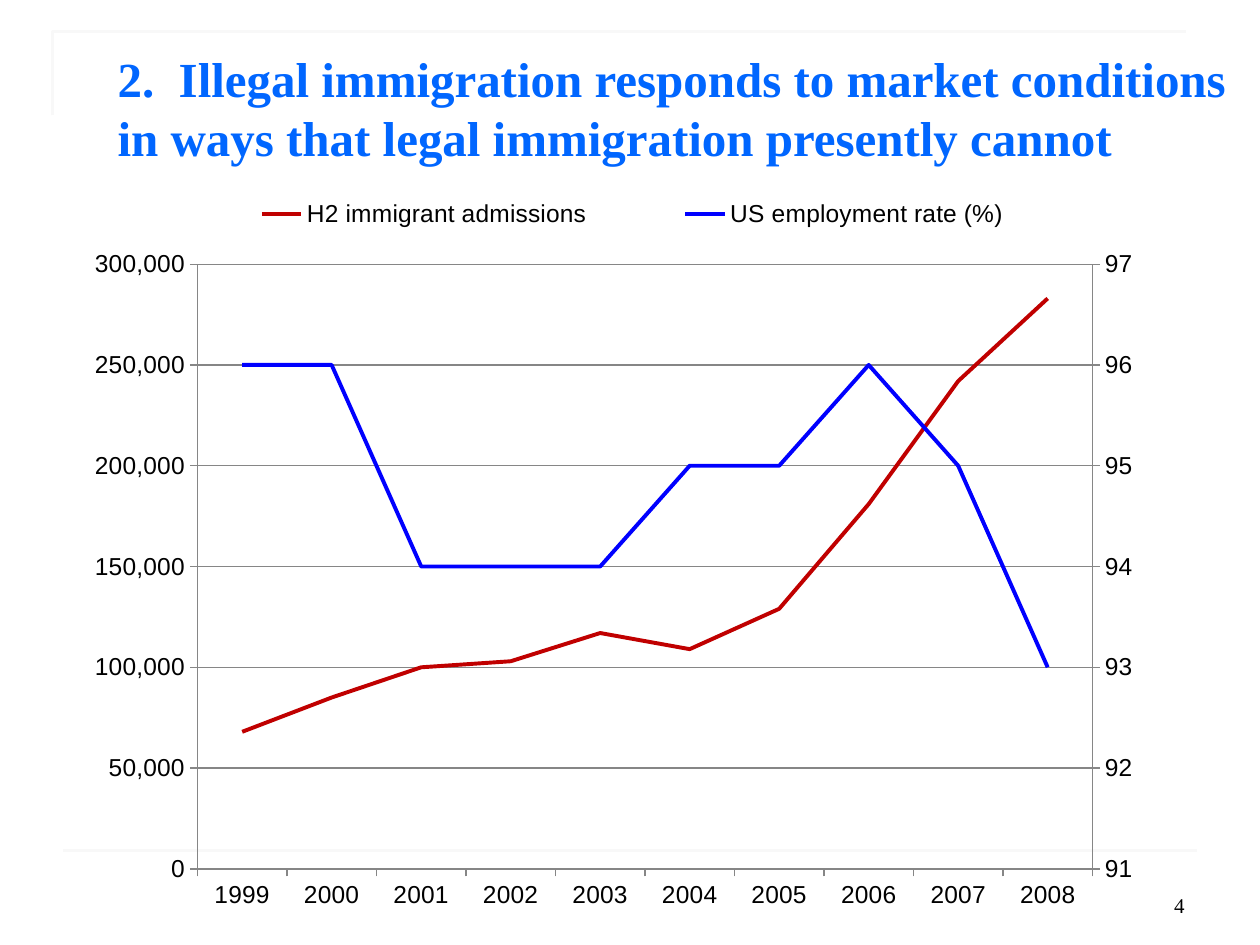
from copy import deepcopy

from lxml import etree
from pptx import Presentation
from pptx.chart.axis import CategoryAxis, ValueAxis
from pptx.chart.data import CategoryChartData
from pptx.dml.color import RGBColor
from pptx.enum.chart import XL_CHART_TYPE, XL_LEGEND_POSITION, XL_TICK_MARK
from pptx.enum.shapes import MSO_CONNECTOR
from pptx.enum.text import MSO_ANCHOR, MSO_AUTO_SIZE, PP_ALIGN
from pptx.oxml import parse_xml
from pptx.oxml.ns import nsdecls, qn
from pptx.util import Pt

LINE_CHART = XL_CHART_TYPE.LINE
LEGEND_TOP = XL_LEGEND_POSITION.TOP
TICK_OUTSIDE = XL_TICK_MARK.OUTSIDE
STRAIGHT = MSO_CONNECTOR.STRAIGHT
TOP, BOTTOM = MSO_ANCHOR.TOP, MSO_ANCHOR.BOTTOM
LEFT, RIGHT = PP_ALIGN.LEFT, PP_ALIGN.RIGHT
NO_AUTOFIT = MSO_AUTO_SIZE.NONE
CHART_WIDTH, CHART_HEIGHT = 618, 420


def color(hex_string):
    return RGBColor.from_string(hex_string)


def manual_layout(left, top, width, height, target=""):
    return parse_xml(
        f'<c:layout {nsdecls("c")}><c:manualLayout>{target}'
        '<c:xMode val="edge"/><c:yMode val="edge"/>'
        f'<c:x val="{left / CHART_WIDTH}"/><c:y val="{top / CHART_HEIGHT}"/>'
        f'<c:w val="{width / CHART_WIDTH}"/><c:h val="{height / CHART_HEIGHT}"/>'
        '</c:manualLayout></c:layout>'
    )


deck = Presentation()
deck.slide_width, deck.slide_height = Pt(720), Pt(540)
page = deck.slides.add_slide(deck.slide_layouts[5])

builder = page.shapes.build_freeform(Pt(30), Pt(66))
builder.add_line_segments([(Pt(30), Pt(18)), (Pt(678), Pt(18))], close=False)
corner = builder.convert_to_shape()
corner.shadow.inherit = False
corner.fill.background()
footer_rule = page.shapes.add_connector(STRAIGHT, Pt(36), Pt(486), Pt(684), Pt(486))
etree.SubElement(footer_rule.element.spPr, qn("a:effectLst"))
for rule in (corner, footer_rule):
    rule.line.color.rgb = color("F8F8F8")
    rule.line.width = Pt(1.5)

title = page.shapes.title
title.left, title.top, title.width, title.height = Pt(60), Pt(24), Pt(648), Pt(120)
number_box = page.shapes.add_textbox(Pt(516), Pt(492), Pt(168), Pt(36))
heading = "2.  Illegal immigration responds to market conditions in ways that legal immigration presently cannot"
texts = [
    (title, heading, 28, "0066FF", True, TOP, LEFT),
    (number_box, "4", 12, "000000", False, BOTTOM, RIGHT),
]
for box, words, size, hue, bold, anchor, align in texts:
    frame = box.text_frame
    frame.word_wrap = True
    frame.auto_size = NO_AUTOFIT
    frame.vertical_anchor = anchor
    para = frame.paragraphs[0]
    para.alignment = align
    para.line_spacing = 1.0
    span = para.add_run()
    span.text = words
    span.font.name = "Times New Roman"
    span.font.size = Pt(size)
    span.font.bold = bold
    span.font.color.rgb = color(hue)

data = CategoryChartData()
data.categories = [str(year) for year in range(1999, 2009)]
data.add_series(
    "H2 immigrant admissions",
    [68000, 85000, 100000, 103000, 117000, 109000, 129000, 181000, 242000, 283000],
)
data.add_series("US employment rate (%)", [96, 96, 94, 94, 94, 95, 95, 96, 95, 93])
chart = page.shapes.add_chart(
    LINE_CHART, Pt(42), Pt(108), Pt(CHART_WIDTH), Pt(CHART_HEIGHT), data
).chart
chart.has_title = False
chart.font.name = "Arial"
chart.font.size = Pt(14)
chart.font.color.rgb = color("000000")
chart.has_legend = True
chart.legend.position = LEGEND_TOP
chart.legend.include_in_layout = False

for series, hue in zip(chart.plots[0].series, ("C00000", "0000FF")):
    series.smooth = False
    series.format.line.color.rgb = color(hue)
    series.format.line.width = Pt(2.25)

years, admissions = chart.category_axis, chart.value_axis
for axis in (years, admissions):
    axis.major_tick_mark = TICK_OUTSIDE
    axis.format.line.color.rgb = color("868686")
    axis.format.line.width = Pt(0.75)
admissions.minimum_scale, admissions.maximum_scale = 0, 300000
admissions.major_unit = 50000
admissions.tick_labels.number_format = "#,##0"
admissions.tick_labels.number_format_is_linked = False
admissions.has_major_gridlines = True
admissions.major_gridlines.format.line.color.rgb = color("868686")
admissions.major_gridlines.format.line.width = Pt(0.75)

plot_area = chart.element.find(".//" + qn("c:plotArea"))
left_plot = plot_area.find(qn("c:lineChart"))
right_plot = deepcopy(left_plot)
left_plot.remove(left_plot.findall(qn("c:ser"))[1])
right_plot.remove(right_plot.findall(qn("c:ser"))[0])
left_plot.addnext(right_plot)

hidden_years = deepcopy(plot_area.find(qn("c:catAx")))
right_values = deepcopy(plot_area.find(qn("c:valAx")))
plot_area.find(qn("c:valAx")).addnext(right_values)
right_values.addnext(hidden_years)
for node, axis_id in zip(right_plot.findall(qn("c:axId")), ("5001", "5002")):
    node.set("val", axis_id)
for node, own_id, crossing_id in ((hidden_years, "5001", "5002"), (right_values, "5002", "5001")):
    node.find(qn("c:axId")).set("val", own_id)
    node.find(qn("c:crossAx")).set("val", crossing_id)
right_values.find(qn("c:axPos")).set("val", "r")
right_values.find(qn("c:crosses")).set("val", "max")
CategoryAxis(hidden_years).visible = False
employment = ValueAxis(right_values)
employment.has_major_gridlines = False
employment.minimum_scale, employment.maximum_scale = 91, 97
employment.major_unit = 1
employment.tick_labels.number_format = "General"

for old_layout in plot_area.findall(qn("c:layout")):
    plot_area.remove(old_layout)
plot_area.insert(0, manual_layout(70.8, 43, 511.5, 345.6, '<c:layoutTarget val="inner"/>'))
legend = chart.element.find(".//" + qn("c:legend"))
for old_layout in legend.findall(qn("c:layout")):
    legend.remove(old_layout)
legend.find(qn("c:legendPos")).addnext(manual_layout(56, 4, 527, 21))

deck.save("out.pptx")
